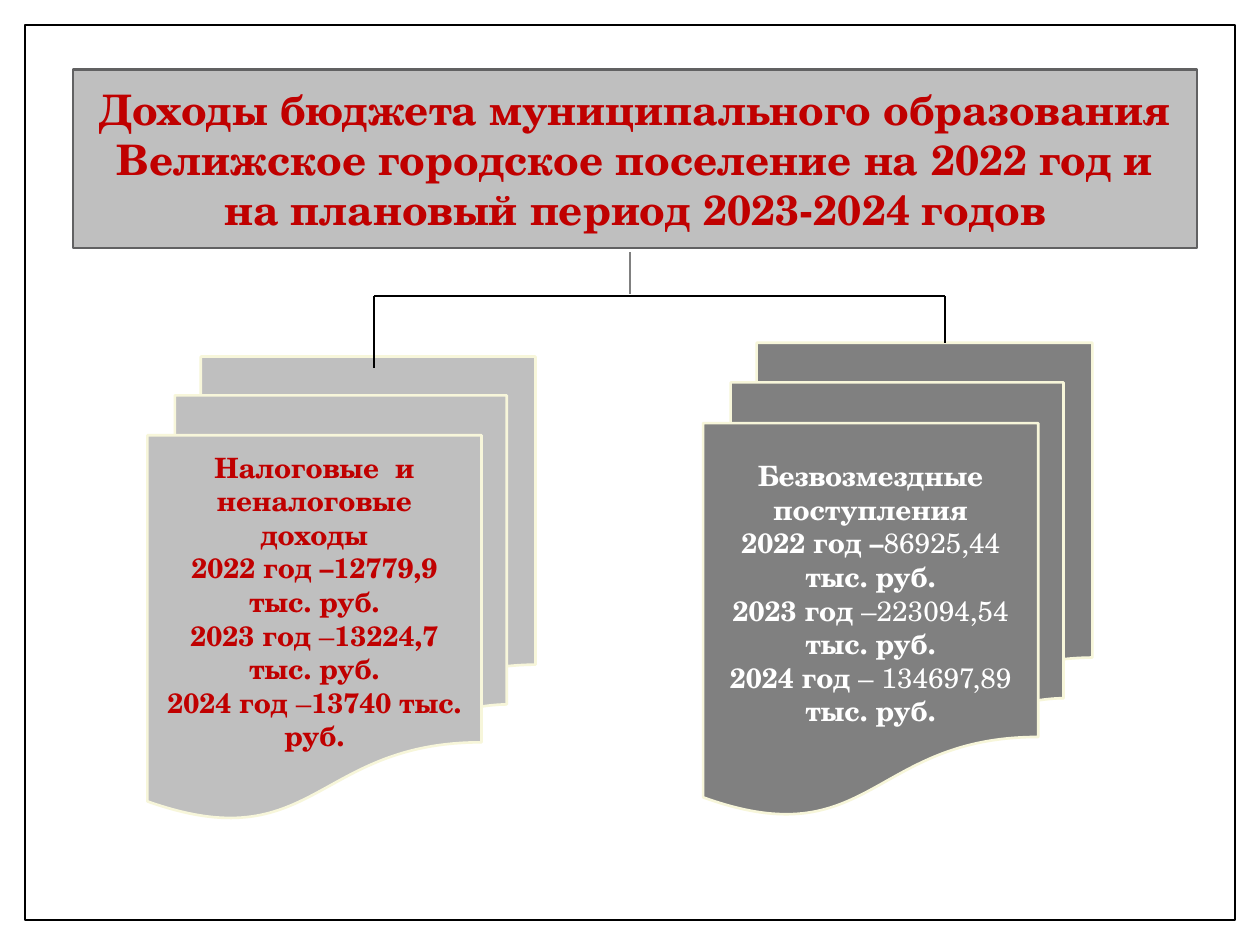
from lxml.etree import SubElement
from pptx import Presentation
from pptx.dml.color import RGBColor
from pptx.enum.shapes import MSO_CONNECTOR, MSO_SHAPE
from pptx.enum.text import MSO_ANCHOR, MSO_AUTO_SIZE, PP_ALIGN
from pptx.oxml import parse_xml
from pptx.oxml.ns import nsdecls, qn
from pptx.util import Inches, Pt

WHITE = RGBColor(0xFF, 0xFF, 0xFF)
BLACK = RGBColor(0x00, 0x00, 0x00)
RED = RGBColor(0xC0, 0x00, 0x00)
SILVER = RGBColor(0xBF, 0xBF, 0xBF)
GRAY = RGBColor(0x80, 0x80, 0x80)
DARK_GRAY = RGBColor(0x61, 0x61, 0x62)
CREAM = RGBColor(0xF7, 0xF6, 0xDA)
FONT = "TeX Gyre Schola"

TITLE = ("Доходы бюджета муниципального образования Велижское городское "
         "поселение на 2022 год и на плановый период 2023-2024 годов")
TAX_INCOME = [
    [("Налоговые  и неналоговые доходы", True)],
    [("2022 год –12779,9", True)],
    [("тыс. руб.", True)],
    [("2023 год ", True), ("–", False), ("13224,7 тыс. руб.", True)],
    [("2024 год ", True), ("–", False), ("13740 тыс. руб.", True)],
]
GRANTS = [
    [("Безвозмездные поступления", True)],
    [("2022 год –", True), ("86925,44 ", False), ("тыс. руб.", True)],
    [("2023 год ", True), ("–223094,54 ", False), ("тыс. руб.", True)],
    [("2024 год ", True), ("– 134697,89 ", False), ("тыс. руб.", True)],
]


def set_attrs(obj, values):
    """Set each named attribute of an object."""
    for name, value in values.items():
        setattr(obj, name, value)


def paint(sp, fill, line, width):
    """Give a shape a solid fill and an outline."""
    sp.fill.solid()
    sp.fill.fore_color.rgb = fill
    sp.line.color.rgb = line
    sp.line.width = Pt(width)


def write(sp, paragraphs, size, color, bottom=0.05):
    """Write centred paragraphs of (text, bold) runs into a shape."""
    tf = sp.text_frame
    set_attrs(tf, {"word_wrap": True, "auto_size": MSO_AUTO_SIZE.NONE,
                   "vertical_anchor": MSO_ANCHOR.MIDDLE,
                   "margin_bottom": Inches(bottom)})
    for i, runs in enumerate(paragraphs):
        p = tf.add_paragraph() if i else tf.paragraphs[0]
        p.alignment = PP_ALIGN.CENTER
        for text, bold in runs:
            r = p.add_run()
            r.text = text
            set_attrs(r.font, {"name": FONT, "size": Pt(size), "bold": bold})
            r.font.color.rgb = color


def add_shape(slide, kind, box, fill, line, width):
    """Add a painted preset shape without shadow."""
    sp = slide.shapes.add_shape(kind, *map(Inches, box))
    sp.shadow.inherit = False
    paint(sp, fill, line, width)
    return sp


def add_title(slide, box):
    """Turn the title placeholder into a rounded banner."""
    sp = slide.shapes.title
    set_attrs(sp, dict(zip(("left", "top", "width", "height"), map(Inches, box))))
    geom = parse_xml(f'<a:prstGeom {nsdecls("a")} prst="roundRect"><a:avLst/></a:prstGeom>')
    sp.element.spPr.find(qn("a:xfrm")).addnext(geom)
    paint(sp, SILVER, DARK_GRAY, 1.5)
    write(sp, [[(TITLE, True)]], 24, RED)


def add_document(slide, box, paragraphs, fill, color):
    """Add a stack of sheets holding one kind of income."""
    sp = add_shape(slide, MSO_SHAPE.FLOWCHART_MULTIDOCUMENT, box, fill, CREAM, 1.5)
    write(sp, paragraphs, 16, color, bottom=0.32)


def add_line(slide, start, end, color):
    """Add a thin straight connector."""
    cx = slide.shapes.add_connector(MSO_CONNECTOR.STRAIGHT, *map(Inches, start + end))
    cx.line.color.rgb = color
    cx.line.width = Pt(0.79)
    SubElement(cx._element.spPr, qn("a:effectLst"))


def add_branches(slide, left, right, bar, left_end, right_end):
    """Draw the stem, the bar and the two drops of the tree."""
    add_line(slide, (left, bar), (right, bar), BLACK)
    add_line(slide, (left, bar), (left, left_end), BLACK)
    add_line(slide, (right, bar), (right, right_end), BLACK)
    add_line(slide, (5, 2), (5, 2.33), GRAY)


def main():
    """Build the slide and save it."""
    prs = Presentation()
    set_attrs(prs, {"slide_width": Inches(10), "slide_height": Inches(7.5)})
    slide = prs.slides.add_slide(prs.slide_layouts[5])
    frame = add_shape(slide, MSO_SHAPE.RECTANGLE, (0.2, 0.2, 9.6, 7.1), WHITE, BLACK, 1)
    slide.shapes.title.element.addprevious(frame.element)
    add_title(slide, (0.58, 0.55, 8.92, 1.42))
    add_document(slide, (5.58, 2.72, 3.09, 3.75), GRANTS, GRAY, WHITE)
    add_document(slide, (1.17, 2.83, 3.08, 3.67), TAX_INCOME, SILVER, RED)
    add_branches(slide, 2.97, 7.5, 2.35, 2.92, 2.72)
    prs.save("out.pptx")


if __name__ == "__main__":
    main()
